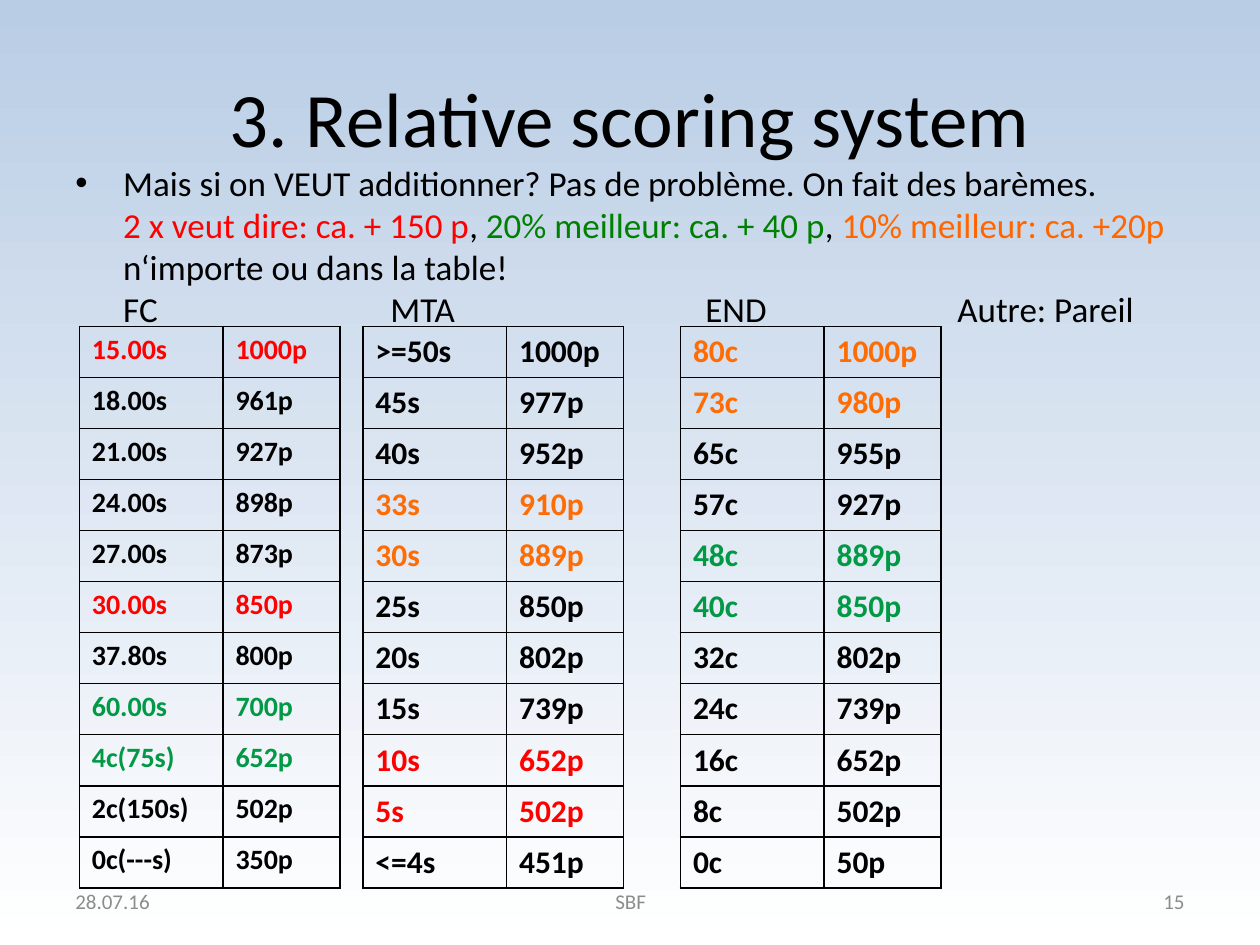
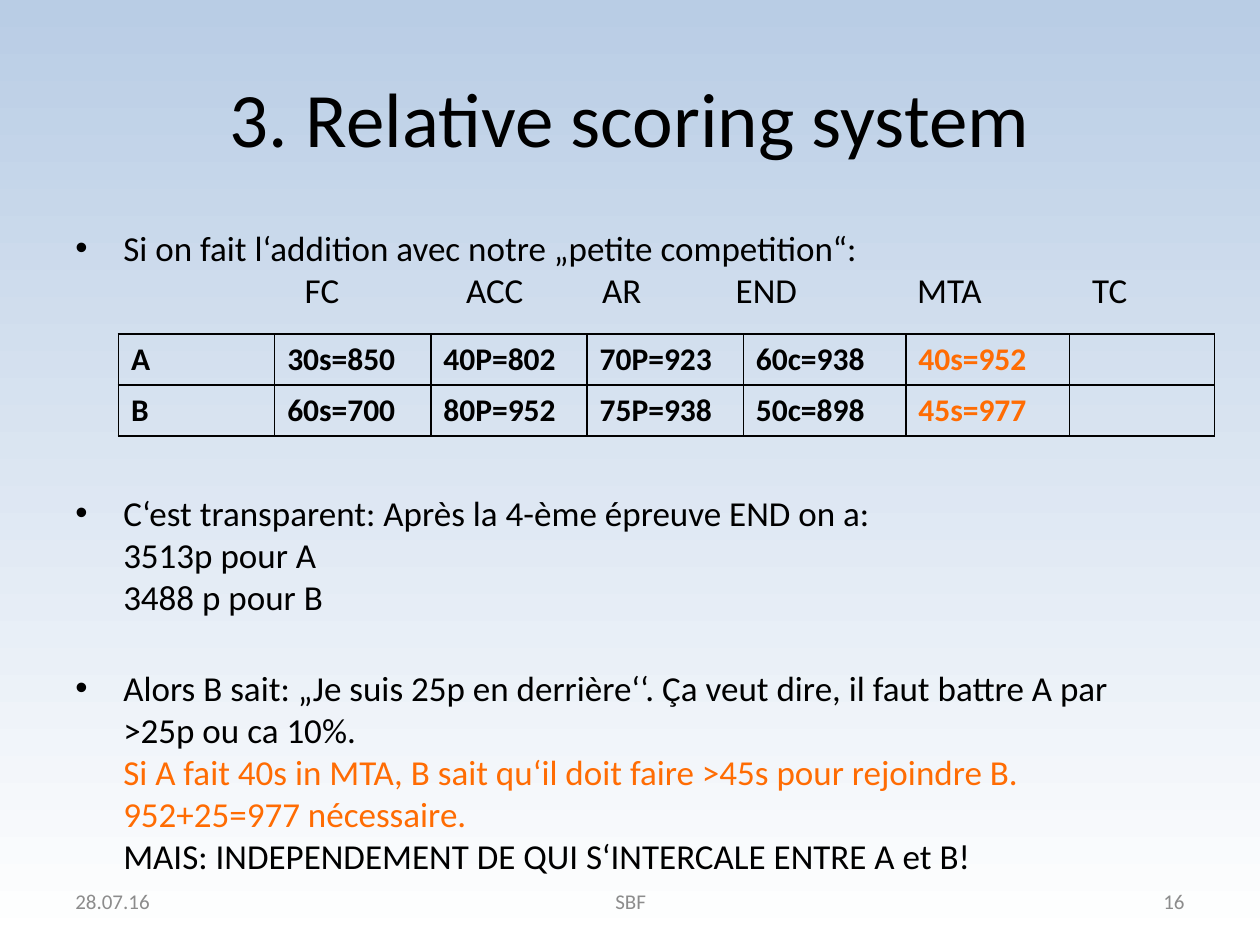
"""Build two slides about the relative scoring system."""
import lxml.etree
import pptx
import pptx.dml.color
import pptx.enum.text
import pptx.oxml.ns
import pptx.util

Inches = pptx.util.Inches
Pt = pptx.util.Pt
ALIGN = pptx.enum.text.PP_ALIGN
MIDDLE = pptx.enum.text.MSO_ANCHOR.MIDDLE
qn = pptx.oxml.ns.qn

FONT = "Calibri"
COLORS = {
    "black": "000000",
    "grey": "8C8C8C",
    "red": "FF0000",
    "green": "008000",
    "orange": "FF6600",
    "table_green": "019945",
    "table_orange": "FF6C03",
    "sky": "B9CDE5",
    "white": "FFFFFF",
}
TITLE = "3. Relative scoring system"
INDENT = 0.38
ROW_HEIGHT = 0.4055

FC = [
    ("15.00s", "1000p"), ("18.00s", "961p"), ("21.00s", "927p"),
    ("24.00s", "898p"), ("27.00s", "873p"), ("30.00s", "850p"),
    ("37.80s", "800p"), ("60.00s", "700p"), ("4c(75s)", "652p"),
    ("2c(150s)", "502p"), ("0c(---s)", "350p"),
]
MTA = [
    (">=50s", "1000p"), ("45s", "977p"), ("40s", "952p"), ("33s", "910p"),
    ("30s", "889p"), ("25s", "850p"), ("20s", "802p"), ("15s", "739p"),
    ("10s", "652p"), ("5s", "502p"), ("<=4s", "451p"),
]
END = [
    ("80c", "1000p"), ("73c", "980p"), ("65c", "955p"), ("57c", "927p"),
    ("48c", "889p"), ("40c", "850p"), ("32c", "802p"), ("24c", "739p"),
    ("16c", "652p"), ("8c", "502p"), ("0c", "50p"),
]
SCALES = [
    (0.63, FC, 16, {0: "red", 5: "red", 7: "table_green", 8: "table_green"}),
    (2.88, MTA, 18, {3: "table_orange", 4: "table_orange", 8: "red", 9: "red"}),
    (5.4, END, 18, {0: "table_orange", 1: "table_orange",
                    4: "table_green", 5: "table_green"}),
]
COMPETITION = [
    ("A", "30s=850", "40P=802", "70P=923", "60c=938", "40s=952", ""),
    ("B", "60s=700", "80P=952", "75P=938", "50c=898", "45s=977", ""),
]


def rgb(name):
    """Return the named colour."""
    return pptx.dml.color.RGBColor.from_string(COLORS[name])


def add_text(p, text, size=20, color="black", bold=False):
    """Add formatted text to a paragraph, breaking lines at newlines."""
    for i, line in enumerate(text.split("\n")):
        if i:
            p.add_line_break()
        if line:
            r = p.add_run()
            r.text = line
            r.font.name = FONT
            r.font.size = Pt(size)
            r.font.bold = bold
            r.font.color.rgb = rgb(color)


def add_child(parent, tag, **attrs):
    """Append a DrawingML element."""
    child = lxml.etree.SubElement(parent, qn(tag))
    for key, value in attrs.items():
        child.set(key, str(value))
    return child


class Deck:
    """Hold the style and the current slide."""

    def __init__(self):
        """Start a presentation with the shared background."""
        self.prs = pptx.Presentation()
        self.prs.slide_width = Inches(10)
        self.prs.slide_height = Inches(7.5)
        fill = self.prs.slide_master.background.fill
        fill.gradient()
        fill.gradient_angle = 270
        for stop, name in zip(fill.gradient_stops, ("sky", "white")):
            stop.color.rgb = rgb(name)

    def slide(self, number):
        """Add a slide with its title and footers."""
        self.s = self.prs.slides.add_slide(self.prs.slide_layouts[5])
        title = self.s.shapes.title
        title.left, title.top = Inches(0.5), Inches(0.3)
        title.width, title.height = Inches(9), Inches(1.25)
        tf = title.text_frame
        tf.vertical_anchor = MIDDLE
        tf.paragraphs[0].alignment = ALIGN.CENTER
        add_text(tf.paragraphs[0], TITLE, size=44)
        footers = [(0.5, 2.33, "28.07.16", ALIGN.LEFT),
                   (3.42, 3.17, "SBF", ALIGN.CENTER),
                   (7.17, 2.33, str(number), ALIGN.RIGHT)]
        for left, width, text, align in footers:
            tf = self.box(left, 6.95, width, 0.4)
            tf.vertical_anchor = MIDDLE
            tf.paragraphs[0].alignment = align
            add_text(tf.paragraphs[0], text, size=12, color="grey")

    def box(self, left, top, width, height):
        """Add a wrapping text box and return its text frame."""
        sp = self.s.shapes.add_textbox(
            Inches(left), Inches(top), Inches(width), Inches(height))
        sp.text_frame.word_wrap = True
        return sp.text_frame

    def bullet(self, p, *parts, before=0):
        """Fill a bulleted paragraph with (text, colour) parts."""
        pPr = p._p.get_or_add_pPr()
        pPr.set("marL", str(Inches(INDENT)))
        pPr.set("indent", str(-Inches(INDENT)))
        add_child(pPr, "a:buFont", typeface="Arial")
        add_child(pPr, "a:buChar", char="•")
        p.space_before = Pt(before)
        for text, color in parts:
            add_text(p, text, color=color)

    def labels(self, p, stops):
        """Fill a paragraph with labels set at tab stops."""
        tabs = add_child(p._p.get_or_add_pPr(), "a:tabLst")
        for pos in stops.values():
            add_child(tabs, "a:tab", pos=Inches(pos), algn="l")
        add_text(p, "".join("\t" + label for label in stops))

    def table(self, left, top, widths, rows, color_of, size=18):
        """Add a bordered table without fills."""
        sp = self.s.shapes.add_table(
            len(rows), len(widths), Inches(left), Inches(top),
            Inches(sum(widths)), Inches(ROW_HEIGHT * len(rows)))
        table = sp.table
        table.first_row = table.horz_banding = False
        for column, width in zip(table.columns, widths):
            column.width = Inches(width)
        for i, row in enumerate(rows):
            table.rows[i].height = Inches(ROW_HEIGHT)
            for j, text in enumerate(row):
                cell = table.cell(i, j)
                self.border(cell)
                cell.fill.background()
                add_text(cell.text_frame.paragraphs[0], text, size=size,
                         color=color_of(i, j), bold=True)

    def border(self, cell):
        """Draw a thin black line on each side of a cell."""
        tcPr = cell._tc.get_or_add_tcPr()
        for side in "LRTB":
            ln = add_child(tcPr, "a:ln" + side, w=Pt(1))
            fill = add_child(ln, "a:solidFill")
            add_child(fill, "a:srgbClr", val=COLORS["black"])


def scales_slide(deck):
    """Build the slide with the three point scales."""
    deck.slide(15)
    tf = deck.box(0.5, 1.23, 9.27, 1.45)
    deck.bullet(
        tf.paragraphs[0],
        ("Mais si on VEUT additionner? Pas de problème. On fait des barèmes.\n", "black"),
        ("2 x veut dire: ca. + 150 p", "red"),
        (", ", "black"),
        ("20% meilleur: ca. + 40 p", "green"),
        (", ", "black"),
        ("10% meilleur: ca. +20p\n", "orange"),
        ("n‘importe ou dans la table!", "black"))
    deck.labels(tf.add_paragraph(),
                {"FC": INDENT, "MTA": 2.5, "END": 5, "Autre: Pareil": 7})
    for left, rows, size, marks in SCALES:
        deck.table(left, 2.59, (1.14, 0.93), rows,
                   lambda i, j: marks.get(i, "black"), size=size)


def competition_slide(deck):
    """Build the slide with the small competition."""
    deck.slide(16)
    tf = deck.box(0.5, 1.75, 8.95, 4.95)
    deck.bullet(tf.paragraphs[0],
                ("Si on fait l‘addition avec notre „petite competition“:", "black"))
    deck.labels(tf.add_paragraph(),
                {"FC": 1.82, "ACC": 3.1, "AR": 4.18,
                 "END": 5.24, "MTA": 6.68, "TC": 8.07})
    deck.bullet(
        tf.add_paragraph(),
        ("C‘est transparent: Après la 4-ème épreuve END on a:\n"
         "3513p pour A\n3488 p pour B", "black"),
        before=103)
    deck.bullet(
        tf.add_paragraph(),
        ("Alors B sait: „Je suis 25p en derrière‘‘. Ça veut dire, "
         "il faut battre A par >25p ou ca 10%.\n", "black"),
        ("Si A fait 40s in MTA, B sait qu‘il doit faire >45s pour "
         "rejoindre B. 952+25=977 nécessaire.\n", "table_orange"),
        ("MAIS: INDEPENDEMENT DE QUI S‘INTERCALE ENTRE A et B!", "black"),
        before=28)
    deck.table(0.94, 2.65, (1.24,) * 4 + (1.29, 1.3, 1.15), COMPETITION,
               lambda i, j: "table_orange" if j == 5 else "black")


def main():
    """Build and save the presentation."""
    deck = Deck()
    scales_slide(deck)
    competition_slide(deck)
    deck.prs.save("out.pptx")


if __name__ == "__main__":
    main()
